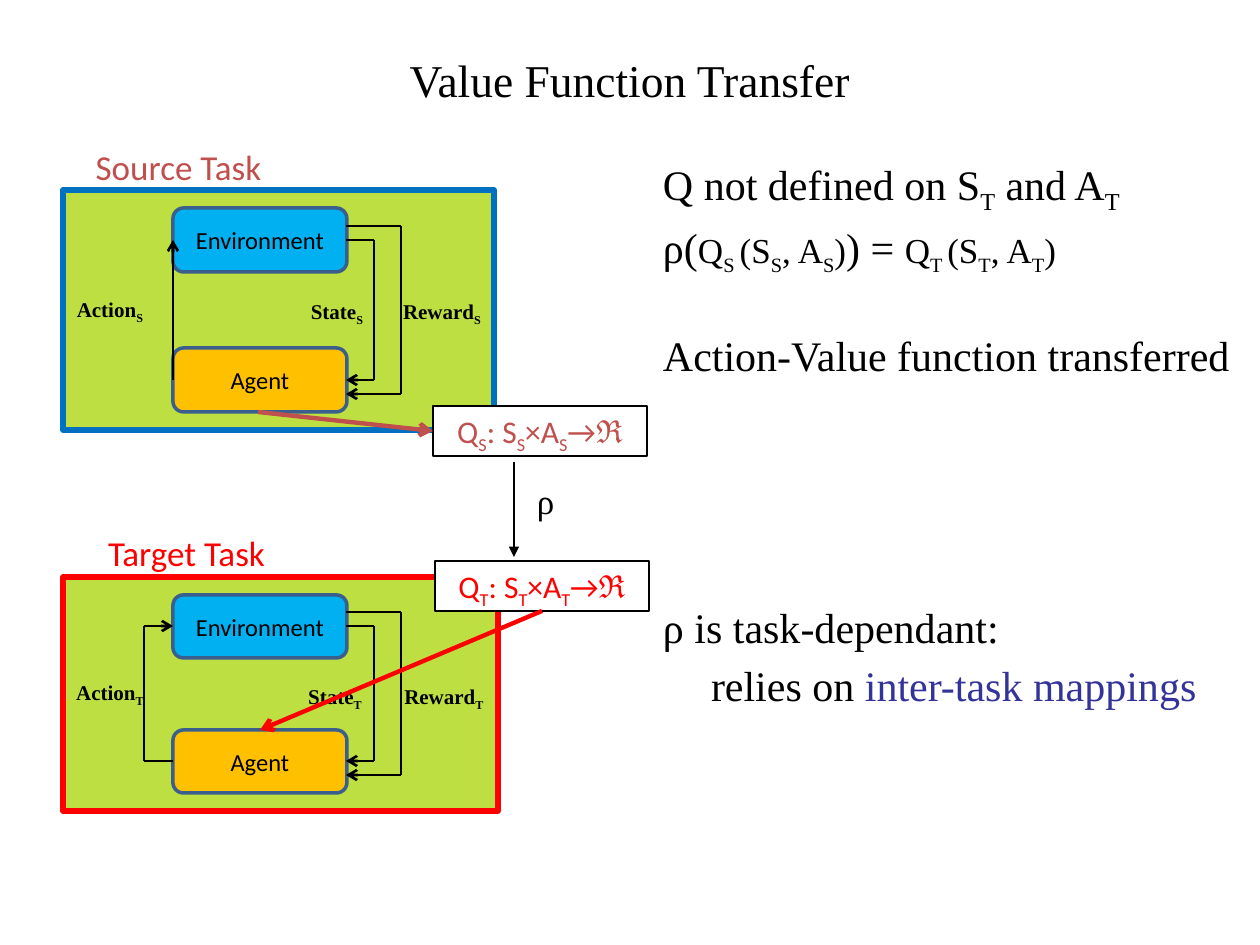
from lxml import etree
from pptx import Presentation
from pptx.dml.color import RGBColor
from pptx.enum.shapes import MSO_CONNECTOR, MSO_SHAPE
from pptx.enum.text import MSO_ANCHOR, PP_ALIGN
from pptx.oxml.ns import qn
from pptx.util import Emu, Pt

RECT, ROUND = MSO_SHAPE.RECTANGLE, MSO_SHAPE.ROUNDED_RECTANGLE
STRAIGHT = MSO_CONNECTOR.STRAIGHT
TOP, MIDDLE = MSO_ANCHOR.TOP, MSO_ANCHOR.MIDDLE
LEFT, CENTER = PP_ALIGN.LEFT, PP_ALIGN.CENTER

BLACK = RGBColor(0x00, 0x00, 0x00)
WHITE = RGBColor(0xFF, 0xFF, 0xFF)
RED = RGBColor(0xFF, 0x00, 0x00)
ROSE = RGBColor(0xC0, 0x50, 0x4D)
BLUE = RGBColor(0x00, 0x70, 0xC0)
SKY = RGBColor(0x00, 0xB0, 0xF0)
NAVY = RGBColor(0x3A, 0x5F, 0x8C)
INDIGO = RGBColor(0x33, 0x33, 0x99)
LIME = RGBColor(0xBD, 0xDF, 0x41)
GOLD = RGBColor(0xFF, 0xC0, 0x00)
SERIF, SANS, MATH = "Times New Roman", "Calibri", "Cambria"
PX = 914400 / 126

deck = Presentation()
deck.slide_width, deck.slide_height = Emu(9144000), Emu(6858000)
slide = deck.slides.add_slide(deck.slide_layouts[6])
shapes = slide.shapes


def box(rect, pieces=(), kind=None, fill=None, edge=None, width=1,
        align=CENTER, anchor=MIDDLE, wrap=False, inset=0):
    """Add a shape, or a text box if kind is None.

    Each piece is (text, format values); ~ switches subscript on and off.
    """
    rect = [Emu(round(n * PX)) for n in rect]
    if kind is None:
        shape = shapes.add_textbox(*rect)
    else:
        shape = shapes.add_shape(kind, *rect)
        shape.shadow.inherit = False
        shape.fill.solid()
        shape.fill.fore_color.rgb = fill
        if edge is None:
            shape.line.fill.background()
        else:
            shape.line.color.rgb = edge
            shape.line.width = Pt(width)
    frame = shape.text_frame
    side = Emu(round(inset * PX))
    for name, value in {"word_wrap": wrap, "vertical_anchor": anchor,
                        "margin_left": side, "margin_right": side}.items():
        setattr(frame, name, value)
    para = frame.paragraphs[0]
    para.alignment = align
    write(para, pieces)
    return frame


def write(para, pieces):
    for text, style in pieces:
        style = {"name": SERIF, "size": Pt(24), **style}
        tint = style.pop("color", BLACK)
        for i, part in enumerate(text.split("~")):
            if not part:
                continue
            run = para.add_run()
            run.text = part
            for name, value in style.items():
                setattr(run.font, name, value)
            run.font.color.rgb = tint
            if i % 2:
                run.font._element.set("baseline", "-25000")


# Each line is (points, color, width, arrowhead); all are drawn by one loop
def draw(lines):
    for points, color, width, head in lines:
        for i, (a, b) in enumerate(zip(points, points[1:])):
            line = shapes.add_connector(
                STRAIGHT, *(Emu(round(n * PX)) for n in (*a, *b)))
            line.line.color.rgb = color
            line.line.width = Pt(width)
            props = line._element.spPr
            if i == len(points) - 2:
                etree.SubElement(props.find(qn("a:ln")), qn("a:tailEnd"), type=head)
            etree.SubElement(props, qn("a:effectLst"))


# Title and notes
box((32, 0, 1196, 158), [("Value Function Transfer", {"size": Pt(26)})], wrap=True)

small = {"size": Pt(20)}
notes = [
    (0, 1, 0, [("Q not defined on S~T~ and A~T~", {})]),
    (5, 0.9, 0, [("ρ(", {}), ("Q~S ~(S~S~, A~S~)", small), (") = ", {}),
                 ("Q~T ~(S~T~, A~T~)", small)]),
    (35, 0.9, 0, [("Action-Value function transferred", {})]),
    (130, 0.9, 0, [("ρ is task-dependant:", {})]),
    (7, 0.9, 48, [("relies on ", {}), ("inter-task mappings", {"color": INDIGO})]),
]
frame = box((651, 152, 609, 666), align=LEFT, anchor=TOP, wrap=True, inset=12)
for i, (gap, pitch, indent, pieces) in enumerate(notes):
    para = frame.add_paragraph() if i else frame.paragraphs[0]
    para.space_before = Pt(gap)
    para.line_spacing = pitch
    para._p.get_or_add_pPr().set("marL", str(round(indent * PX)))
    write(para, pieces)

# Mapping from source to target
draw([([(514, 462), (514, 557)], BLACK, 0.75, "triangle")])
box((525, 473, 42, 54), [("ρ", small)], align=LEFT, anchor=TOP, wrap=True, inset=12)

# Tasks: name, name box, tint, panel, edge, agent top, node height, action x, labels
tasks = [
    ("Target", (63, 536, 247, 32), RED, (63, 577, 435, 234), RED,
     730, 63, 144, ((110, 673), (335, 677), (444, 677))),
    ("Source", (105, 144, 147, 45), ROSE, (63, 190, 431, 240), BLUE,
     348, 64, 173, ((110, 290), (337, 292), (442, 292))),
]
for name, spot, tint, panel, edge, low, high, turn, marks in tasks:
    box(spot, [(name + " Task", {"name": SANS, "size": Pt(20), "color": tint})],
        RECT, WHITE)
    box(panel, (), RECT, LIME, edge, 3)
    top = panel[1] + 18
    for text, y, fill in (("Environment", top, SKY), ("Agent", low, GOLD)):
        box((173, y, 174, high), [(text, {"name": SANS, "size": Pt(14)})],
            ROUND, fill, NAVY, 2)
    up, down = top + high // 2, low + high // 2
    act = [(173, down), (turn, down), (turn, up), (173, up)]
    draw([
        (act if turn < 173 else [act[0], act[-1]], BLACK, 1.5, "arrow"),
        ([(346, up), (374, up), (374, down), (346, down)], BLACK, 1.5, "arrow"),
        ([(346, up - 14), (401, up - 14), (401, down + 14), (346, down + 14)],
         BLACK, 1.5, "arrow"),
    ])
    for word, (x, y) in zip(("Action", "State", "Reward"), marks):
        box((x - 50, y, 100, 53),
            [(f"{word}~{name[0]}~", {"size": Pt(12), "bold": True})], anchor=TOP)

# Value functions
for key, x, y, tint in (("S", 433, 406, ROSE), ("T", 435, 561, RED)):
    style = {"name": SANS, "size": Pt(18), "color": tint}
    box((x, y, 214, 50),
        [(f"Q~{key}~: S~{key}~×A~{key}~→", style), ("ℜ", {**style, "name": MATH})],
        RECT, WHITE, BLACK, 0.75, anchor=TOP)
draw([
    ([(258, 412), (433, 431)], ROSE, 2.5, "arrow"),
    ([(542, 611), (260, 730)], RED, 2.5, "arrow"),
])

deck.save("out.pptx")
